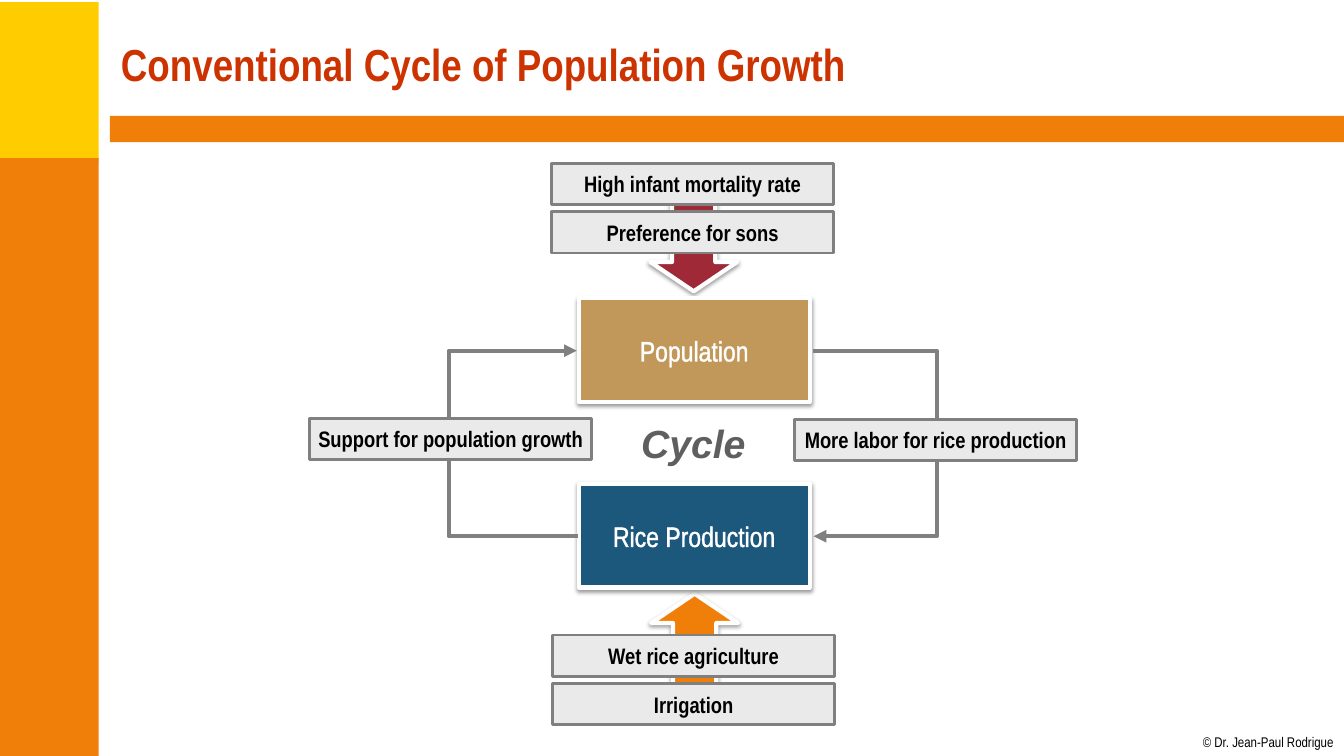
"""Builds the slide on the conventional cycle of population growth."""
from lxml import etree
from pptx import Presentation
from pptx.dml.color import RGBColor
from pptx.enum.shapes import MSO_CONNECTOR, MSO_SHAPE
from pptx.enum.text import MSO_ANCHOR, MSO_AUTO_SIZE, PP_ALIGN
from pptx.oxml import parse_xml
from pptx.oxml.ns import qn
from pptx.util import Inches, Pt

RECT, UP_ARROW = MSO_SHAPE.RECTANGLE, MSO_SHAPE.UP_ARROW
ELBOW = MSO_CONNECTOR.ELBOW
MIDDLE = MSO_ANCHOR.MIDDLE
LEFT, CENTER = PP_ALIGN.LEFT, PP_ALIGN.CENTER
NO_FIT = MSO_AUTO_SIZE.NONE
NS = 'xmlns:a="http://schemas.openxmlformats.org/drawingml/2006/main"'
SHADOW = (f'<a:outerShdw {NS} blurRad="39370" dist="20320" dir="5400000" rotWithShape="0">'
          '<a:srgbClr val="000000"><a:alpha val="38000"/></a:srgbClr></a:outerShdw>')
TEXT_OUTLINE = (f'<a:ln {NS} w="18415"><a:solidFill><a:srgbClr val="FFFFFF"/>'
                '</a:solidFill></a:ln>')
ORANGE, GREY = "F07F09", "808080"

prs = Presentation()
prs.slide_width, prs.slide_height = Inches(13.33), Inches(7.5)
slide = prs.slides.add_slide(prs.slide_layouts[5])
shapes = slide.shapes


def add_block(kind, place, fill, line=None, width=0, shadow=False):
    block = shapes.add_shape(kind, *map(Inches, place))
    block.fill.solid()
    block.fill.fore_color.rgb = RGBColor.from_string(fill)
    if line:
        block.line.color.rgb = RGBColor.from_string(line)
        block.line.width = Pt(width)
    else:
        block.line.fill.background()
    block.shadow.inherit = False
    if shadow:
        block._element.spPr.find(qn("a:effectLst")).append(parse_xml(SHADOW))
    return block


def write(holder, text, size, color, bold=False, align=CENTER, font="Arial Narrow", wrap=False):
    frame = holder.text_frame
    frame.text = text
    frame.word_wrap = wrap
    frame.auto_size = NO_FIT
    frame.vertical_anchor = MIDDLE
    frame.paragraphs[0].alignment = align
    run = frame.paragraphs[0].runs[0]
    run.font.name, run.font.size, run.font.bold = font, Pt(size), bold
    run.font.color.rgb = RGBColor.from_string(color)
    return run


add_block(RECT, (-0.02, 0.02, 1, 1.58), "FFCC00")
add_block(RECT, (-0.02, 1.57, 1, 5.93), ORANGE)
add_block(RECT, (1.09, 1.15, 12.24, 0.26), ORANGE)

title = shapes.title
title.left, title.top, title.width, title.height = map(Inches, (1.1, 0.11, 12, 1.04))
write(title, "Conventional Cycle of Population Growth", 32, "CC3300", True, LEFT, wrap=True)

copyright_line = shapes.add_textbox(*map(Inches, (11.93, 7.28, 1.31, 0.17)))
write(copyright_line, "© Dr. Jean-Paul Rodrigue", 10, "000000", align=LEFT)
margins = copyright_line.text_frame
margins.margin_left = margins.margin_right = margins.margin_top = margins.margin_bottom = 0

for left, top, color, rotation in ((6.46, 5.89, ORANGE, 0), (6.45, 1.73, "9F2936", 180)):
    driver = add_block(UP_ARROW, (left, top, 0.86, 1.16), color, "FFFFFF", 3, True)
    driver.adjustments[0], driver.adjustments[1] = 0.5, 0.338
    driver.rotation = rotation

for stage, top, color in (("Population", 2.96, "C19859"), ("Rice Production", 4.8, "1B587C")):
    box = add_block(RECT, (5.74, top, 2.29, 1.03), color, "FFFFFF", 3, True)
    stage_run = write(box, stage, 20, "FFFFFF")
    stage_run.font._element.insert(0, parse_xml(TEXT_OUTLINE))

for start_x, start_y, end_x, end_y, reach in ((8.06, 3.48, 8.07, 5.32, 1.25),
                                              (5.73, 5.32, 5.72, 3.48, 1.3)):
    flow = shapes.add_connector(ELBOW, *map(Inches, (start_x, start_y, end_x, end_y)))
    flow.line.color.rgb = RGBColor.from_string(GREY)
    flow.line.width = Pt(3)
    properties = flow._element.spPr
    bend = round(reach / abs(end_x - start_x) * 100000)
    guides = properties.find(qn("a:prstGeom")).find(qn("a:avLst"))
    etree.SubElement(guides, qn("a:gd"), name="adj1", fmla=f"val {bend}")
    etree.SubElement(properties.find(qn("a:ln")), qn("a:tailEnd"), type="triangle")
    etree.SubElement(properties, qn("a:effectLst"))

for factor, left, top in (("More labor for rice production", 7.88, 4.16),
                          ("Support for population growth", 3.07, 4.15),
                          ("Wet rice agriculture", 5.48, 6.3),
                          ("Irrigation", 5.48, 6.78),
                          ("High infant mortality rate", 5.47, 1.62),
                          ("Preference for sons", 5.47, 2.1)):
    label = add_block(RECT, (left, top, 2.8, 0.41), "EAEAEA", GREY, 2)
    write(label, factor, 16, "000000", True)

cycle = shapes.add_textbox(*map(Inches, (6.26, 4.11, 1.24, 0.57)))
write(cycle, "Cycle", 28, "5F5F5F", True, LEFT, "Arial").font.italic = True

prs.save("out.pptx")
